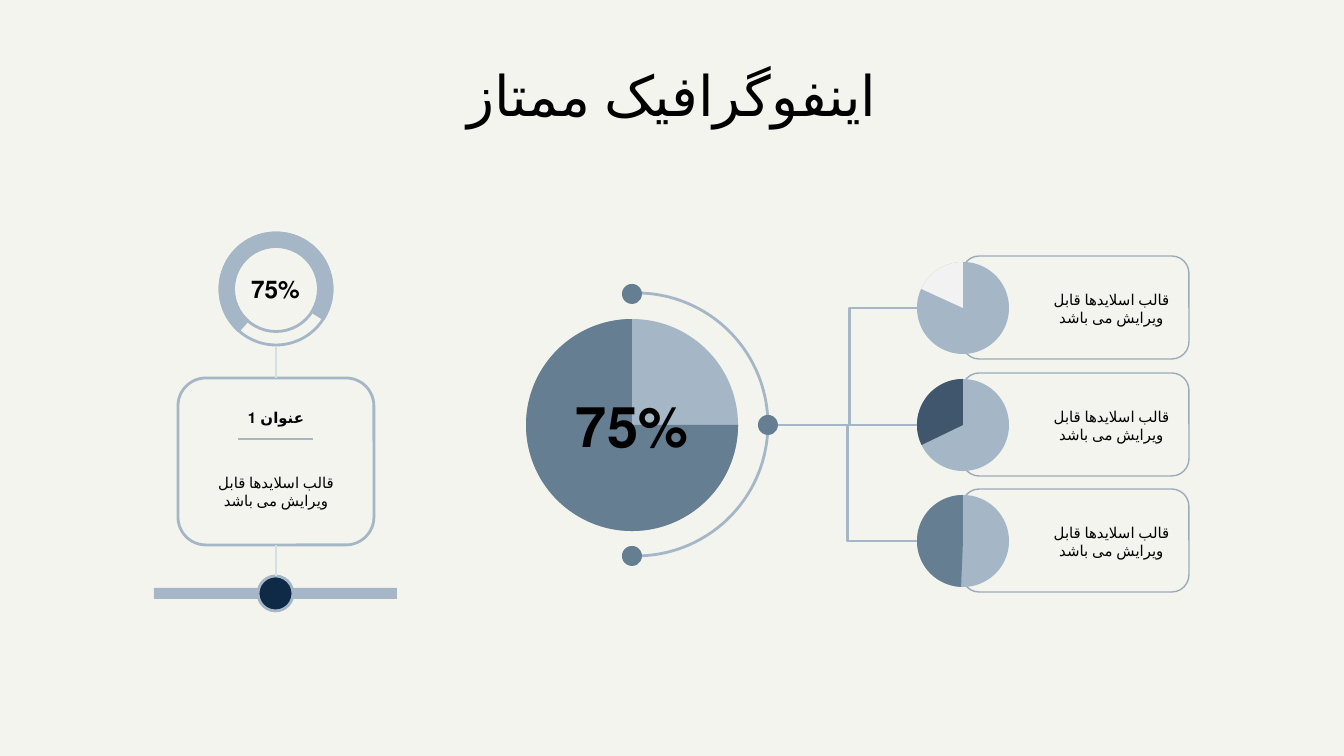
from pptx import Presentation, util as u
from pptx.dml.color import RGBColor
from pptx.enum import lang, shapes as sh, text as tx
from pptx.oxml import ns
from lxml import etree

PX = 914400 / 134.4
MIST = RGBColor(0xA5, 0xB7, 0xC6)
SLATE = RGBColor(0x66, 0x7E, 0x92)
STEEL = RGBColor(0x40, 0x56, 0x6D)
NAVY = RGBColor(0x0E, 0x2A, 0x47)
PALE = RGBColor(0xF2, 0xF2, 0xF2)
HAIRLINE = RGBColor(0xD7, 0xDF, 0xE5)
OUTLINE = RGBColor(0x9B, 0xAB, 0xB9)
CREAM = RGBColor(0xF3, 0xF4, 0xEE)
BLACK = RGBColor(0, 0, 0)
KIND = sh.MSO_SHAPE
BODY = "قالب اسلایدها قابل ویرایش می باشد"
TOP = 162  # angle of twelve o'clock, in adjustment units

prs = Presentation()
prs.slide_width, prs.slide_height = round(1344 * PX), round(756 * PX)
slide = prs.slides.add_slide(prs.slide_layouts[6])
slide.background.fill.solid()
slide.background.fill.fore_color.rgb = CREAM


def emu(*lengths):
    return [round(length * PX) for length in lengths]


def write(content, box, size=8, bold=False, font="Arial", anchor=tx.MSO_ANCHOR.MIDDLE):
    frame = slide.shapes.add_textbox(*emu(*box)).text_frame
    frame.word_wrap = True
    frame.vertical_anchor = anchor
    frame.margin_left = frame.margin_right = u.Inches(0.1)
    frame.margin_top = frame.margin_bottom = u.Inches(0.1)
    line = frame.paragraphs[0]
    line.alignment = tx.PP_ALIGN.CENTER
    line._p.get_or_add_pPr().set("rtl", "1")
    run = line.add_run()
    run.text = content
    run.font.size, run.font.bold, run.font.name = u.Pt(size), bold, font
    run.font.color.rgb = BLACK
    run.font.language_id = lang.MSO_LANGUAGE_ID.FARSI


# Shapes from back to front: kind, box, adjustments, fill, line, line width
gauge = (220, 233, 112, 112)
big_pie = (526, 319, 212, 212)
figures = [
    # Left column: slider bar, gauge, card, knob
    (KIND.RECTANGLE, (154, 588, 243, 11), (), MIST, None, 0),
    (KIND.DONUT, gauge, (0.12,), None, MIST, 1.5),
    (KIND.BLOCK_ARC, gauge, (79.14, 19.26, 0.12), MIST, MIST, 1.5),
    (KIND.ROUNDED_RECTANGLE, (178, 378, 196, 167), (0.167,), None, MIST, 1.5),
    (KIND.OVAL, (258, 576, 35, 35), (), NAVY, MIST, 1.5),
    # Centre: arc and main pie
    (KIND.ARC, (505, 293, 263, 263), (TOP, 52.98), None, MIST, 1.5),
    (KIND.OVAL, big_pie, (), MIST, None, 0),
    (KIND.PIE, big_pie, (0, TOP), SLATE, None, 0),
]
# Right column: a box with a small pie for each row
rows = [(308, 122.72, PALE), (425, 92.53, STEEL), (541, 55.44, SLATE)]
for middle, start, slice_color in rows:
    small_pie = (917, middle - 46, 92, 92)
    figures += [
        (KIND.ROUNDED_RECTANGLE, (962, middle - 52, 227, 103), (0.167,), None, OUTLINE, 0.75),
        (KIND.OVAL, small_pie, (), MIST, None, 0),
        (KIND.PIE, small_pie, (start, TOP), slice_color, None, 0),
    ]
# Dots on the arc
for x, y in [(622, 284), (622, 546), (758, 415)]:
    figures.append((KIND.OVAL, (x, y, 20, 20), (), SLATE, None, 0))

for kind, box, adjustments, fill, line, width in figures:
    figure = slide.shapes.add_shape(kind, *emu(*box))
    figure.shadow.inherit = False
    for i, value in enumerate(adjustments):
        figure.adjustments[i] = value
    if fill is None:
        figure.fill.background()
    else:
        figure.fill.solid()
        figure.fill.fore_color.rgb = fill
    if line is None:
        figure.line.fill.background()
    else:
        figure.line.color.rgb = line
        figure.line.width = u.Pt(width)

# Lines: ends, colour, width, bend position
links = [
    ((276, 346, 276, 378), HAIRLINE, 0.75, None),
    ((276, 545, 276, 576), HAIRLINE, 0.75, None),
    ((238, 439, 313, 439), MIST, 1.5, None),
    ((778, 425, 917, 308), MIST, 1.5, 51500),
    ((778, 425, 917, 541), MIST, 1.5, 50000),
    ((778, 425, 917, 425), MIST, 1.5, None),
]
for ends, color, width, bend in links:
    route = sh.MSO_CONNECTOR.ELBOW if bend else sh.MSO_CONNECTOR.STRAIGHT
    link = slide.shapes.add_connector(route, *emu(*ends))
    link.line.color.rgb = color
    link.line.width = u.Pt(width)
    properties = link._element.spPr
    etree.SubElement(properties, ns.qn("a:effectLst"))
    if bend:
        guides = properties.find(".//" + ns.qn("a:avLst"))
        etree.SubElement(guides, ns.qn("a:gd"), name="adj1", fmla=f"val {bend}")

# Text
write("اینفوگرافیک ممتاز", (154, 47, 1036, 71), size=30, font="Karla", anchor=tx.MSO_ANCHOR.TOP)
write("75%", (233, 262, 85, 54), size=13, bold=True)
write("عنوان 1", (214, 402, 124, 32), bold=True)
write(BODY, (191, 458, 170, 67))
write("75%", (559, 379, 146, 93), size=30, bold=True)
for middle, _, _ in rows:
    write(BODY, (1028, middle - 32, 167, 65))

prs.save("out.pptx")
